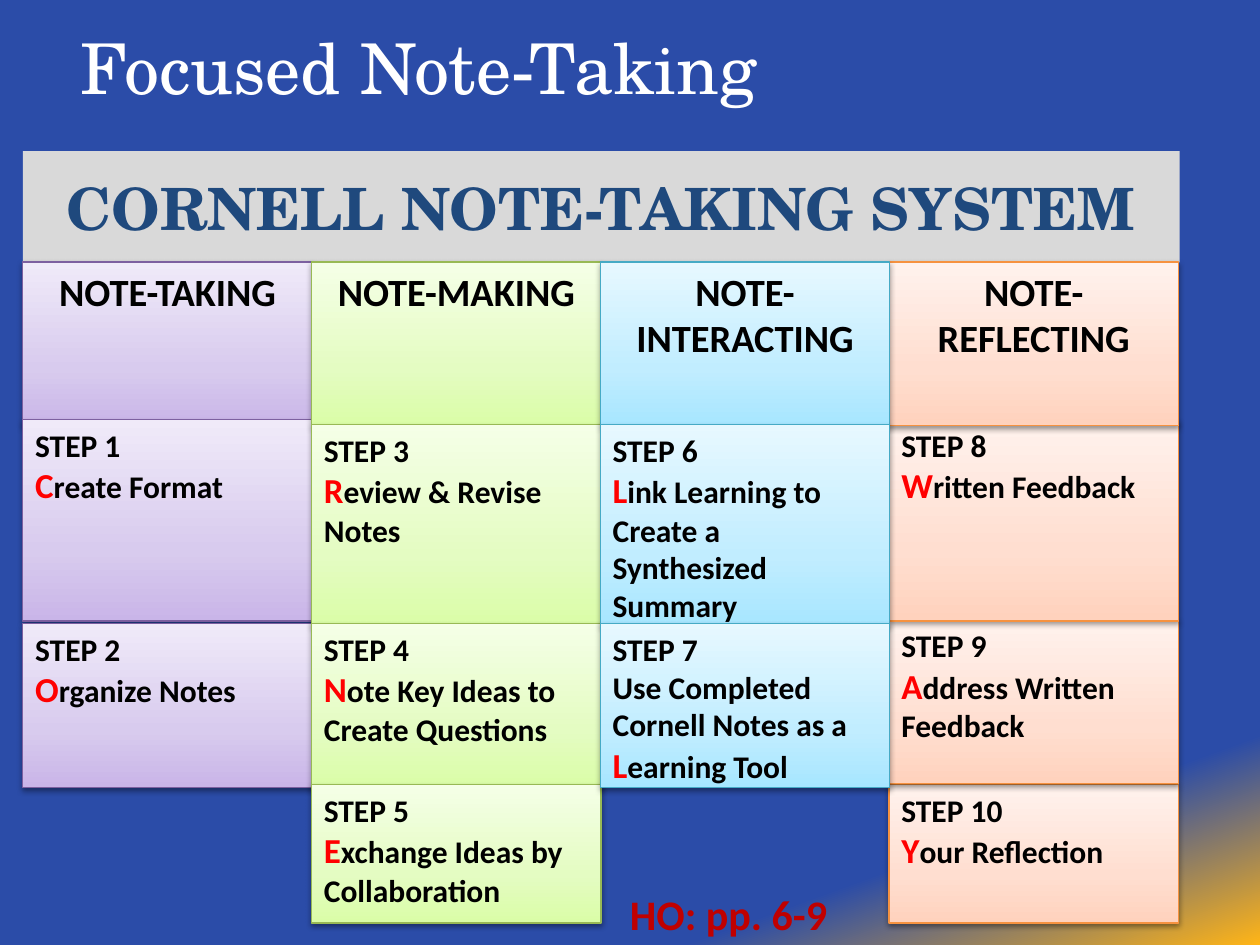
import pptx
import pptx.dml.color
import pptx.enum.shapes
import pptx.enum.text
import pptx.oxml
import pptx.oxml.ns
import pptx.util
from pptx.util import Cm

ALIGN = pptx.enum.text.PP_ALIGN
ANCHOR = pptx.enum.text.MSO_ANCHOR
AUTO_SIZE = pptx.enum.text.MSO_AUTO_SIZE

COLORS = {
    "blue": "2B4CA8", "gold": "FFB517", "white": "FFFFFF", "black": "000000",
    "banner": "D9D9D9", "navy": "1F497D", "initial": "FF0000", "handout": "C00000",
}
PHASE_COLORS = {
    "taking": {"line": "7D60A0", "stops": ("C9B5E8", "D8CBEE", "F0EAF9")},
    "making": {"line": "98B955", "stops": ("DAFDA7", "E4FCC2", "F5FFE7")},
    "interacting": {"line": "46AAC5", "stops": ("A7E6FF", "C1EDFF", "E7F8FF")},
    "reflecting": {"line": "F69240", "stops": ("FFD2BD", "FFDED0", "FFF2ED")},
}
STOP_POSITIONS = (0, 35, 100)

LEFT, PITCH, CARD_WIDTH = 0.46, 5.82, 5.84
HEADING_TOP, HEADING_HEIGHT = 5.28, 3.3
FIRST_HEIGHT, SECOND_HEIGHT, THIRD_HEIGHT = 4.06, 3.3, 2.79
THIRD_TOP = 15.82

PHASES = [
    ("taking", 0, "NOTE-TAKING", [
        (8.46, FIRST_HEIGHT, "STEP 1\n*C*reate Format"),
        (12.57, SECOND_HEIGHT, "STEP 2\n*O*rganize Notes"),
    ]),
    ("making", 1, "NOTE-MAKING", [
        (8.56, FIRST_HEIGHT, "STEP 3\n*R*eview & Revise Notes"),
        (12.57, SECOND_HEIGHT, "STEP 4\n*N*ote Key Ideas to Create Questions"),
        (THIRD_TOP, THIRD_HEIGHT, "STEP 5\n*E*xchange Ideas by Collaboration"),
    ]),
    ("reflecting", 3, "NOTE-REFLECTING", [
        (THIRD_TOP, THIRD_HEIGHT, "STEP 10\n*Y*our Reflection"),
        (12.5, SECOND_HEIGHT, "STEP 9\n*A*ddress Written Feedback"),
        (8.46, FIRST_HEIGHT, "STEP 8\n*W*ritten Feedback"),
    ]),
    ("interacting", 2, "NOTE-INTERACTING", [
        (8.56, FIRST_HEIGHT, "STEP 6\n*L*ink Learning to Create a Synthesized Summary"),
        (12.57, SECOND_HEIGHT,
         "STEP 7\nUse Completed Cornell Notes as a *L*earning Tool"),
    ]),
]


def rgb(value):
    return pptx.dml.color.RGBColor.from_string(value)


def write(frame, text, size=18, font="Calibri", color="black", bold=True,
          align=ALIGN.LEFT, anchor=ANCHOR.TOP, auto_size=AUTO_SIZE.NONE):
    frame.word_wrap = True
    frame.auto_size = auto_size
    frame.vertical_anchor = anchor
    for index, line in enumerate(text.split("\n")):
        paragraph = frame.paragraphs[0] if index == 0 else frame.add_paragraph()
        paragraph.alignment = align
        for part, words in enumerate(line.split("*")):
            if not words:
                continue
            is_initial = part % 2 == 1
            run = paragraph.add_run()
            run.text = words
            run.font.name = font
            run.font.bold = bold
            run.font.size = pptx.util.Pt(20 if is_initial else size)
            run.font.color.rgb = rgb(COLORS["initial" if is_initial else color])


def set_gradient(owner, fill, stops, angle):
    fill.gradient()
    gradient = owner.xpath(".//a:gradFill")[0]
    for child in list(gradient):
        gradient.remove(child)
    namespace = pptx.oxml.ns.nsdecls("a")
    entries = "".join(
        f'<a:gs pos="{position * 1000}"><a:srgbClr val="{color}"/></a:gs>'
        for position, color in stops)
    gradient.append(pptx.oxml.parse_xml(f"<a:gsLst {namespace}>{entries}</a:gsLst>"))
    gradient.append(pptx.oxml.parse_xml(
        f'<a:lin {namespace} ang="{angle * 60000}" scaled="0"/>'))


def add_rectangle(slide, left, top, width, height):
    rectangle = slide.shapes.add_shape(
        pptx.enum.shapes.MSO_SHAPE.RECTANGLE, Cm(left), Cm(top), Cm(width), Cm(height))
    rectangle.shadow.inherit = False
    return rectangle


def add_shadow(card):
    effects = card._element.xpath("./p:spPr/a:effectLst")[0]
    effects.append(pptx.oxml.parse_xml(
        f'<a:outerShdw {pptx.oxml.ns.nsdecls("a")} blurRad="40000" dist="20000" '
        f'dir="5400000" rotWithShape="0"><a:srgbClr val="{COLORS["black"]}">'
        '<a:alpha val="38000"/></a:srgbClr></a:outerShdw>'))


def add_card(slide, phase, column, top, height, text, **text_format):
    card = add_rectangle(slide, LEFT + column * PITCH, top, CARD_WIDTH, height)
    colors = PHASE_COLORS[phase]
    set_gradient(card._element, card.fill, zip(STOP_POSITIONS, colors["stops"]), 270)
    card.line.color.rgb = rgb(colors["line"])
    card.line.width = pptx.util.Pt(0.75)
    add_shadow(card)
    write(card.text_frame, text, **text_format)


def add_title(slide):
    title = slide.shapes.title
    title.left, title.top = Cm(1.37), Cm(0.36)
    title.width, title.height = Cm(20.98), Cm(1.6)
    write(title.text_frame, "Focused Note-Taking", size=40, font="TeX Gyre Schola",
          color="white", bold=False)


def add_banner(slide):
    banner = add_rectangle(slide, LEFT, 3.05, 23.32, 2.24)
    banner.fill.solid()
    banner.fill.fore_color.rgb = rgb(COLORS["banner"])
    banner.line.fill.background()
    write(banner.text_frame, "CORNELL NOTE-TAKING SYSTEM", size=33.3,
          font="TeX Gyre Schola", color="navy", align=ALIGN.CENTER,
          anchor=ANCHOR.MIDDLE)


def add_handout_note(slide):
    note = slide.shapes.add_textbox(Cm(12.45), Cm(17.78), Cm(5.16), Cm(1.27))
    write(note.text_frame, "HO: pp. 6-9", size=24, color="handout",
          auto_size=AUTO_SIZE.SHAPE_TO_FIT_TEXT)


def add_phase(slide, phase, column, heading, steps):
    def add_heading():
        add_card(slide, phase, column, HEADING_TOP, HEADING_HEIGHT, heading,
                 size=22, align=ALIGN.CENTER)

    heading_in_front = phase == "reflecting"
    if not heading_in_front:
        add_heading()
    for top, height, text in steps:
        add_card(slide, phase, column, top, height, text)
    if heading_in_front:
        add_heading()


def main():
    presentation = pptx.Presentation()
    presentation.slide_width, presentation.slide_height = Cm(25.4), Cm(19.05)
    slide = presentation.slides.add_slide(presentation.slide_layouts[5])
    set_gradient(slide._element, slide.background.fill,
                 [(85, COLORS["blue"]), (100, COLORS["gold"])], 70)
    add_handout_note(slide)
    add_title(slide)
    add_banner(slide)
    for phase in PHASES:
        add_phase(slide, *phase)
    presentation.save("out.pptx")


if __name__ == "__main__":
    main()
